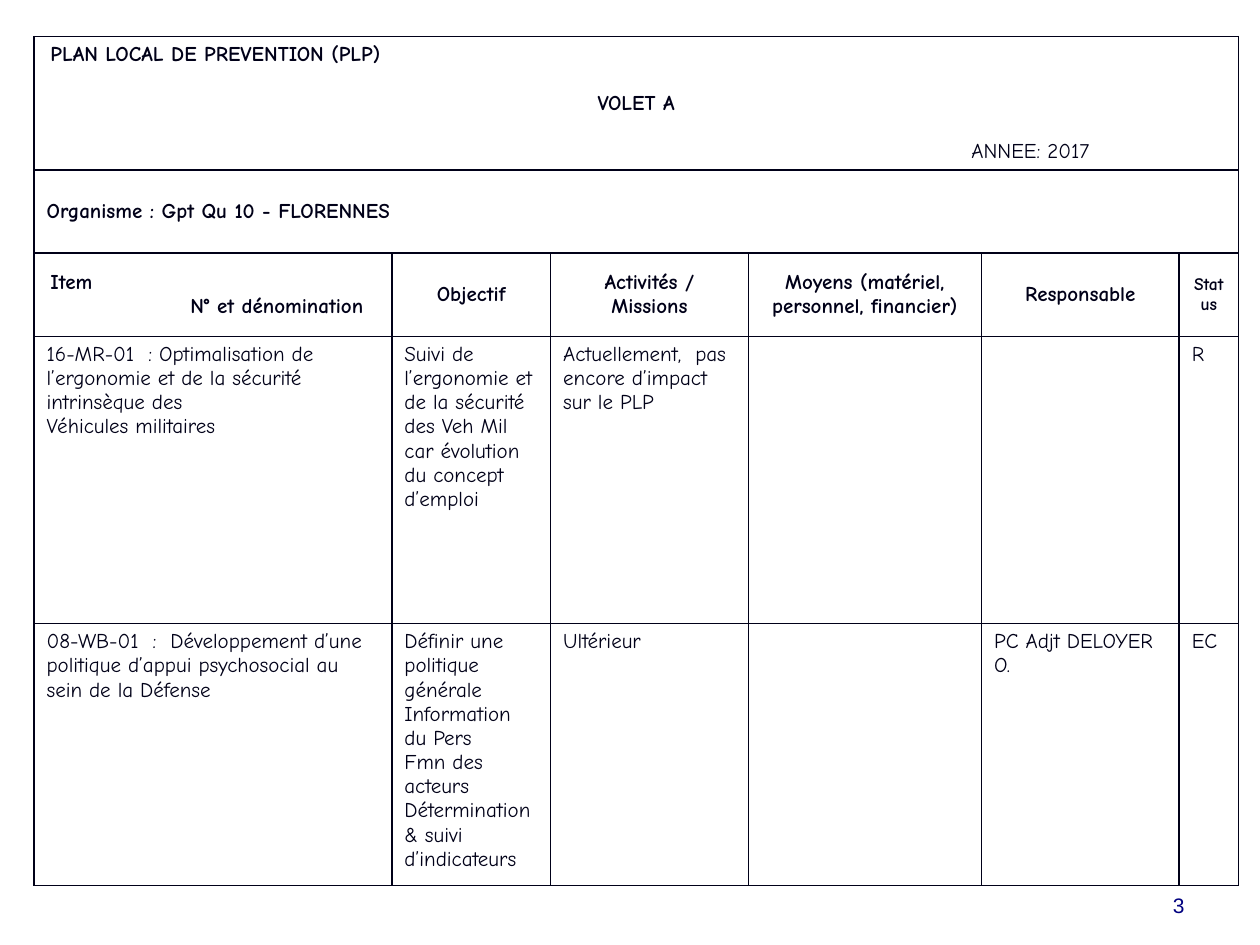
import dataclasses

import pptx
import pptx.dml.color
import pptx.enum.text
import pptx.oxml
import pptx.oxml.ns
import pptx.util
from pptx.util import Inches

RGBColor = pptx.dml.color.RGBColor
ALIGN = pptx.enum.text.PP_ALIGN
ANCHOR = pptx.enum.text.MSO_ANCHOR

INK = RGBColor(0x00, 0x00, 0x18)
NAVY = RGBColor(0x00, 0x00, 0x80)
FONT = "Comic Neue"

COL_WIDTHS = [2.84, 1.26, 1.57, 1.85, 1.57, 0.47]
ROW_HEIGHTS = [1.02, 0.66, 0.66, 2.28, 2.08]


@dataclasses.dataclass
class Para:
    text: str
    bold: bool = False
    align: ALIGN = ALIGN.LEFT
    indent: float = 0
    before: float = 0
    size: int = 12


def heading(text: str, size: int = 12) -> list[Para]:
    return [Para(text, bold=True, align=ALIGN.CENTER, size=size)]


def body(*lines: str) -> list[Para]:
    return [Para(line) for line in lines]


TITLE = [
    Para("PLAN LOCAL DE PREVENTION (PLP)", bold=True, indent=0.03),
    Para("VOLET A", bold=True, align=ALIGN.CENTER, before=13.8),
    Para("ANNEE: 2017", indent=7.34, before=13.8),
]
ORGANISATION = [Para("Organisme : Gpt Qu 10 - FLORENNES", bold=True)]
HEADINGS = [
    [Para("Item", bold=True, indent=0.03),
     Para("N° et dénomination", bold=True, indent=1.14)],
    heading("Objectif"),
    heading("Activités / Missions"),
    heading("Moyens (matériel, personnel, financier)"),
    heading("Responsable"),
    heading("Status", size=10),
]
ITEMS = [
    [
        body("16-MR-01  : Optimalisation de l’ergonomie et de la sécurité "
             "intrinsèque des", "Véhicules militaires"),
        body("Suivi de l’ergonomie et de la sécurité des Veh Mil car "
             "évolution du concept d’emploi"),
        body("Actuellement,  pas encore d’impact sur le PLP"),
        body(),
        body(),
        body("R"),
    ],
    [
        body("08-WB-01  :  Développement d’une politique d’appui "
             "psychosocial au sein de la Défense"),
        body("Définir une politique générale Information du Pers",
             "Fmn des acteurs", "Détermination & suivi d’indicateurs"),
        body("Ultérieur"),
        body(),
        body("PC Adjt DELOYER O."),
        body("EC"),
    ],
]


def set_borders(cell) -> None:
    tc_pr = cell._tc.get_or_add_tcPr()
    for i, side in enumerate(("lnL", "lnR", "lnT", "lnB")):
        tc_pr.insert(i, pptx.oxml.parse_xml(
            f'<a:{side} {pptx.oxml.ns.nsdecls("a")} w="{pptx.util.Pt(1)}">'
            f'<a:solidFill><a:srgbClr val="{INK}"/></a:solidFill></a:{side}>'))


def fill_cell(cell, paras: list[Para], anchor: ANCHOR) -> None:
    cell.vertical_anchor = anchor
    tf = cell.text_frame
    for i, para in enumerate(paras):
        p = tf.add_paragraph() if i else tf.paragraphs[0]
        p.text = para.text
        p.alignment = para.align
        if para.before:
            p.space_before = pptx.util.Pt(para.before)
        if para.indent:
            p._p.get_or_add_pPr().set("marL", str(Inches(para.indent)))
        p.font.name = FONT
        p.font.size = pptx.util.Pt(para.size)
        p.font.bold = para.bold
        p.font.color.rgb = INK


def add_plan_table(s) -> None:
    table = s.shapes.add_table(
        len(ROW_HEIGHTS), len(COL_WIDTHS), Inches(0.27), Inches(0.29),
        Inches(sum(COL_WIDTHS)), Inches(sum(ROW_HEIGHTS))).table
    table.first_row = table.horz_banding = False
    for column, width in zip(table.columns, COL_WIDTHS):
        column.width = Inches(width)
    for row, height in zip(table.rows, ROW_HEIGHTS):
        row.height = Inches(height)
    for cell in table.iter_cells():
        cell.fill.background()
        set_borders(cell)

    # Full-width rows
    for row, paras in enumerate((TITLE, ORGANISATION)):
        table.cell(row, 0).merge(table.cell(row, len(COL_WIDTHS) - 1))
        fill_cell(table.cell(row, 0), paras, ANCHOR.MIDDLE)

    # Column headings and items
    for row, cells in enumerate([HEADINGS, *ITEMS], start=2):
        anchor = ANCHOR.MIDDLE if cells is HEADINGS else ANCHOR.TOP
        for col, paras in enumerate(cells):
            fill_cell(table.cell(row, col), paras, anchor)


def add_page_number(s, number: str) -> None:
    tf = s.shapes.add_textbox(
        Inches(7.17), Inches(6.83), Inches(2.33), Inches(0.5)).text_frame
    tf.word_wrap = True
    tf.vertical_anchor = ANCHOR.BOTTOM
    p = tf.paragraphs[0]
    p.text = number
    p.alignment = ALIGN.RIGHT
    p.font.name = "Arial"
    p.font.size = pptx.util.Pt(12)
    p.font.color.rgb = NAVY


def main() -> None:
    prs = pptx.Presentation()
    prs.slide_width, prs.slide_height = Inches(10), Inches(7.5)
    s = prs.slides.add_slide(prs.slide_layouts[6])
    add_plan_table(s)
    add_page_number(s, "3")
    prs.save("out.pptx")


if __name__ == "__main__":
    main()
